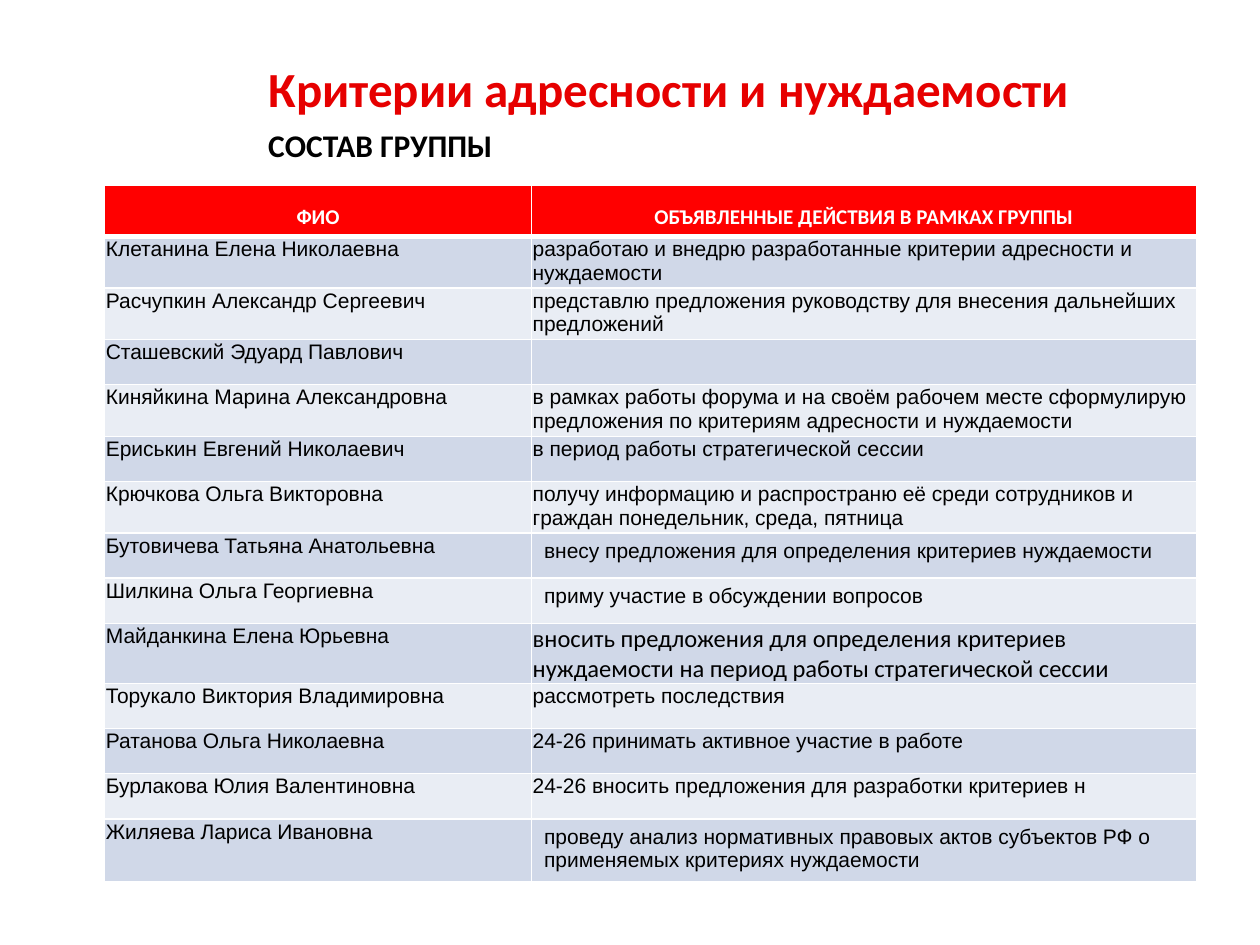
from lxml.etree import SubElement
from pptx import Presentation
from pptx.dml.color import RGBColor as RGB
from pptx.enum.text import MSO_ANCHOR as Anchor, MSO_AUTO_SIZE as AutoSize, PP_ALIGN as Align
from pptx.oxml.ns import qn
from pptx.util import Pt

# Content
TITLE = "Критерии адресности и нуждаемости"
SUBTITLE = "СОСТАВ ГРУППЫ"
HEADER = ("ФИО", "ОБЪЯВЛЕННЫЕ ДЕЙСТВИЯ В РАМКАХ ГРУППЫ")
# name, action, style of the action cell
MEMBERS = [
    ("Клетанина Елена Николаевна",
     "разработаю и внедрю разработанные критерии адресности и нуждаемости", "tight"),
    ("Расчупкин Александр Сергеевич",
     "представлю предложения руководству для внесения дальнейших предложений", "tight"),
    ("Сташевский Эдуард Павлович", "", "tight"),
    ("Киняйкина Марина Александровна",
     "в рамках работы форума и на своём рабочем месте сформулирую предложения "
     "по критериям адресности и нуждаемости", "tight"),
    ("Ериськин Евгений Николаевич", "в период работы стратегической сессии", "tight"),
    ("Крючкова Ольга Викторовна",
     "получу информацию и распространю её среди сотрудников и граждан "
     "понедельник, среда, пятница", "tight"),
    ("Бутовичева Татьяна Анатольевна",
     "внесу предложения для определения критериев нуждаемости", "padded"),
    ("Шилкина Ольга Георгиевна", "приму участие в обсуждении вопросов", "padded"),
    ("Майданкина Елена Юрьевна",
     "вносить предложения для определения критериев нуждаемости на период "
     "работы стратегической сессии", "large"),
    ("Торукало Виктория Владимировна", "рассмотреть последствия", "tight"),
    ("Ратанова Ольга Николаевна", "24-26 принимать активное участие в работе", "tight"),
    ("Бурлакова Юлия Валентиновна",
     "24-26 вносить предложения для разработки критериев н", "tight"),
    ("Жиляева Лариса Ивановна",
     "проведу анализ нормативных правовых актов субъектов РФ о применяемых "
     "критериях нуждаемости", "padded"),
]

# Theme: text styles are (font, size, bold, colour)
THEME = {
    "title": ("Calibri", 28, True, "E60000"),
    "subtitle": ("Calibri", 18, True, "000000"),
    "header": ("Calibri", 12, True, "FFFFFF"),
    "tight": ("Arial", 12, False, "000000"),
    "padded": ("Arial", 12, False, "000000"),
    "large": ("Calibri", 14, False, "000000"),
    "header_fill": "FF0000",
    "bands": ("D0D8E8", "E9EDF4"),
    "border": "FFFFFF",
}

# Layout, in points
TITLE_BOX = (146.2, 36, 514.8, 28.1)
SUBTITLE_BOX = (146.2, 68.4, 360, 28.8)
TABLE_LEFT, TABLE_TOP = 59.8, 105.8
COL_WIDTHS = (243.9, 380)
HEADER_HEIGHT, ROW_HEIGHT = 29.2, 25.8
TIGHT_MARGIN = 0.7


def write(tf, text, style):
    tf.text = text
    font, size, bold, color = THEME[style]
    for r in tf.paragraphs[0].runs:
        r.font.name, r.font.size, r.font.bold = font, Pt(size), bold
        r.font.color.rgb = RGB.from_string(color)


def set_borders(cell, bottom=1, top=1):
    tcPr = cell._tc.get_or_add_tcPr()
    widths = {"a:lnL": 1, "a:lnR": 1, "a:lnT": top, "a:lnB": bottom}
    for i, (tag, width) in enumerate(widths.items()):
        ln = SubElement(tcPr, qn(tag), w=str(Pt(width)))
        fill = SubElement(ln, qn("a:solidFill"))
        SubElement(fill, qn("a:srgbClr"), val=THEME["border"])
        tcPr.insert(i, ln)


def fill_cell(cell, text, style, color):
    write(cell.text_frame, text, style)
    cell.fill.solid()
    cell.fill.fore_color.rgb = RGB.from_string(color)
    if style in ("tight", "large"):
        cell.margin_left = cell.margin_right = cell.margin_top = Pt(TIGHT_MARGIN)
        cell.margin_bottom = 0


prs = Presentation()
prs.slide_width, prs.slide_height = Pt(720), Pt(540)
s = prs.slides.add_slide(prs.slide_layouts[5])

# Title
sp = s.shapes.title
sp.left, sp.top, sp.width, sp.height = map(Pt, TITLE_BOX)
tf = sp.text_frame
write(tf, TITLE, "title")
tf.auto_size = AutoSize.NONE
tf.vertical_anchor = Anchor.MIDDLE
tf.paragraphs[0].alignment = Align.LEFT

# Subtitle
tf = s.shapes.add_textbox(*map(Pt, SUBTITLE_BOX)).text_frame
tf.word_wrap = True
write(tf, SUBTITLE, "subtitle")

# Table of group members
table_height = HEADER_HEIGHT + ROW_HEIGHT * len(MEMBERS)
table = s.shapes.add_table(len(MEMBERS) + 1, len(COL_WIDTHS), Pt(TABLE_LEFT), Pt(TABLE_TOP),
                           Pt(sum(COL_WIDTHS)), Pt(table_height)).table
for col, width in zip(table.columns, COL_WIDTHS):
    col.width = Pt(width)
for i, row in enumerate(table.rows):
    row.height = Pt(ROW_HEIGHT if i else HEADER_HEIGHT)

for cell, text in zip(table.rows[0].cells, HEADER):
    fill_cell(cell, text, "header", THEME["header_fill"])
    set_borders(cell, bottom=3)
    p = cell.text_frame.paragraphs[0]
    p.alignment, p.line_spacing = Align.CENTER, 1.5

for i, (name, action, style) in enumerate(MEMBERS):
    name_cell, action_cell = table.rows[i + 1].cells
    band = THEME["bands"][i % 2]
    fill_cell(name_cell, name, "tight", band)
    fill_cell(action_cell, action, style, band)
    for cell in (name_cell, action_cell):
        set_borders(cell, top=1 if i else 3)

prs.save("out.pptx")
